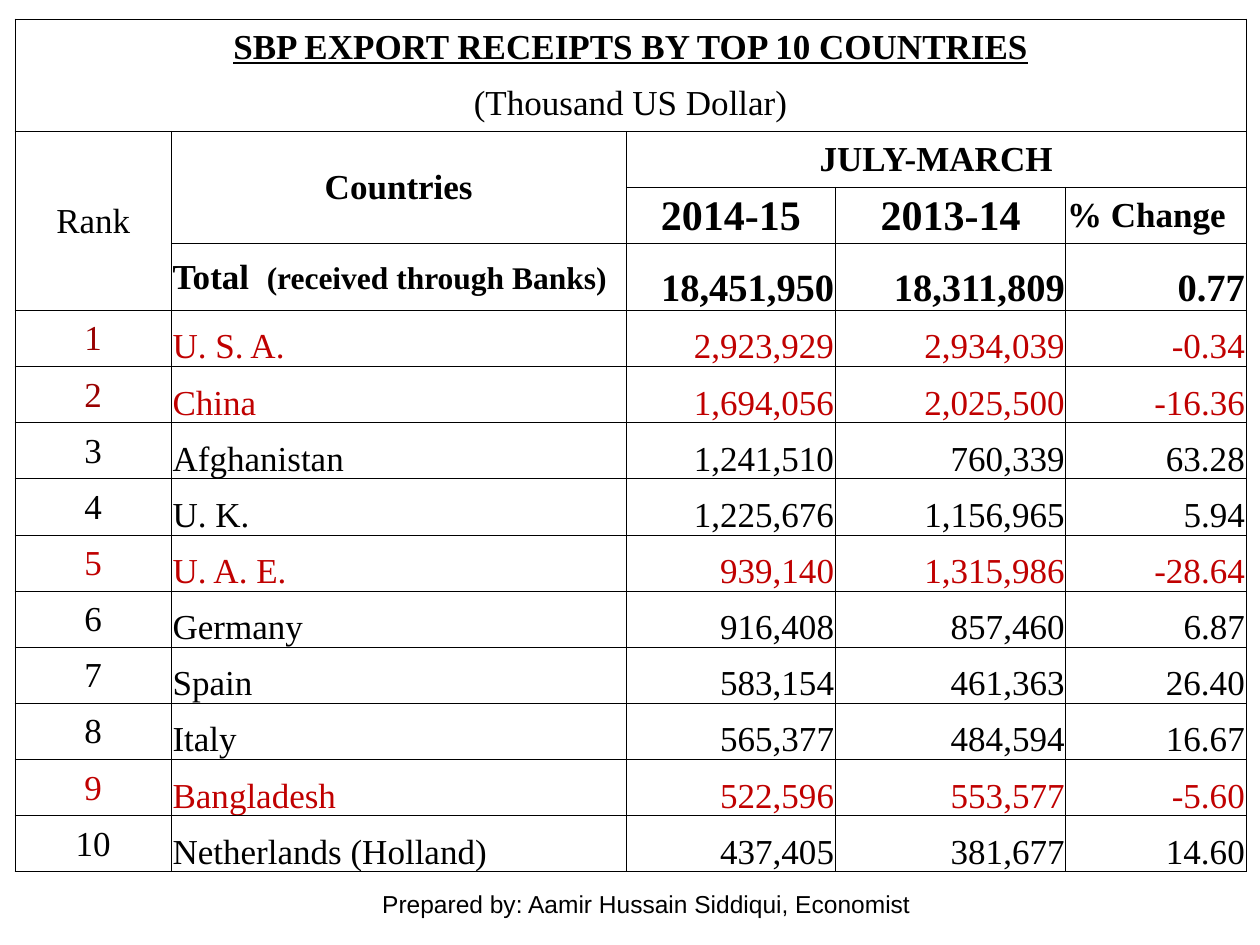
import pptx
import pptx.util
import pptx.dml.color
import pptx.enum.text
import pptx.oxml
import pptx.oxml.ns

Inches, Pt = pptx.util.Inches, pptx.util.Pt
ALIGN = pptx.enum.text.PP_ALIGN
ANCHOR = pptx.enum.text.MSO_ANCHOR

COLORS = {"ink": "000000", "fall": "C00000", "top_fall": "990000"}
SERIF, SANS = "Times New Roman", "Arial"

COLUMN_WIDTHS = [1.24, 3.61, 1.66, 1.83, 1.43]
TABLE_LEFT, TABLE_TOP, TABLE_HEIGHT = 0.12, 0.15, 6.77
TOTAL_ROW, TOTAL_HEIGHT = 4, 0.53
BORDER_WIDTH = 0.5

BOLD = {"bold": True}
HEADINGS = [
    (0, 0, 1, 5, ALIGN.CENTER, [("SBP EXPORT RECEIPTS BY TOP 10 COUNTRIES", {"bold": True, "underline": True})]),
    (1, 0, 1, 5, ALIGN.CENTER, [("(Thousand US Dollar)", {})]),
    (2, 0, 3, 1, ALIGN.CENTER, [("Rank", {})]),
    (2, 1, 2, 1, ALIGN.CENTER, [("Countries", BOLD)]),
    (2, 2, 1, 3, ALIGN.CENTER, [("JULY-MARCH", BOLD)]),
    (3, 2, 1, 1, ALIGN.CENTER, [("2014-15", {"bold": True, "size": 24})]),
    (3, 3, 1, 1, ALIGN.CENTER, [("2013-14", {"bold": True, "size": 24})]),
    (3, 4, 1, 1, ALIGN.LEFT, [("% Change", BOLD)]),
    (4, 1, 1, 1, ALIGN.LEFT, [("Total  ", BOLD), ("(received through Banks)", {"bold": True, "size": 18})]),
]
TOTALS = ["18,451,950", "18,311,809", "0.77"]
COUNTRIES = [
    ("U. S. A.", "2,923,929", "2,934,039", "-0.34"),
    ("China", "1,694,056", "2,025,500", "-16.36"),
    ("Afghanistan", "1,241,510", "760,339", "63.28"),
    ("U. K.", "1,225,676", "1,156,965", "5.94"),
    ("U. A. E.", "939,140", "1,315,986", "-28.64"),
    ("Germany", "916,408", "857,460", "6.87"),
    ("Spain", "583,154", "461,363", "26.40"),
    ("Italy", "565,377", "484,594", "16.67"),
    ("Bangladesh", "522,596", "553,577", "-5.60"),
    ("Netherlands (Holland)", "437,405", "381,677", "14.60"),
]
CREDIT = "Prepared by: Aamir Hussain Siddiqui, Economist"


def add_run(paragraph, text, size=20, font=SERIF, color="ink", bold=False, underline=False):
    run = paragraph.add_run()
    run.text = text
    run.font.size = Pt(size)
    run.font.name = font
    run.font.bold = bold
    run.font.underline = underline
    run.font.color.rgb = pptx.dml.color.RGBColor.from_string(COLORS[color])


def write_cell(cell, align, runs, anchor=ANCHOR.MIDDLE):
    cell.vertical_anchor = anchor
    paragraph = cell.text_frame.paragraphs[0]
    paragraph.alignment = align
    for text, style in runs:
        add_run(paragraph, text, **style)


def format_cell(cell, open_side):
    cell.margin_left = cell.margin_right = cell.margin_top = Inches(0.01)
    cell.margin_bottom = 0
    cell.fill.background()
    properties = cell._tc.get_or_add_tcPr()
    for position, side in enumerate("LRTB"):
        paint = "<a:noFill/>" if side == open_side else (
            f'<a:solidFill><a:srgbClr val="{COLORS["ink"]}"/></a:solidFill>')
        properties.insert(position, pptx.oxml.parse_xml(
            f'<a:ln{side} {pptx.oxml.ns.nsdecls("a")} w="{Pt(BORDER_WIDTH)}">{paint}</a:ln{side}>'))


def add_receipts(slide):
    row_count = TOTAL_ROW + 1 + len(COUNTRIES)
    receipts = slide.shapes.add_table(
        row_count, len(COLUMN_WIDTHS), Inches(TABLE_LEFT), Inches(TABLE_TOP),
        Inches(sum(COLUMN_WIDTHS)), Inches(TABLE_HEIGHT)).table
    receipts.first_row = receipts.horz_banding = False
    for column, width in zip(receipts.columns, COLUMN_WIDTHS):
        column.width = Inches(width)
    row_height = (TABLE_HEIGHT - TOTAL_HEIGHT) / (row_count - 1)
    for index, row in enumerate(receipts.rows):
        row.height = Inches(TOTAL_HEIGHT if index == TOTAL_ROW else row_height)
        for cell in row.cells:
            format_cell(cell, {0: "B", 1: "T"}.get(index))

    for row, column, height, width, align, runs in HEADINGS:
        cell = receipts.cell(row, column)
        if height * width > 1:
            cell.merge(receipts.cell(row + height - 1, column + width - 1))
        write_cell(cell, align, runs)
    for column, total in enumerate(TOTALS, 2):
        write_cell(receipts.cell(TOTAL_ROW, column), ALIGN.RIGHT,
                   [(total, {"bold": True, "size": 22})], ANCHOR.BOTTOM)

    for rank, entries in enumerate(COUNTRIES, 1):
        color = "fall" if entries[-1].startswith("-") else "ink"
        rank_color = "top_fall" if color == "fall" and rank <= 2 else color
        row = TOTAL_ROW + rank
        write_cell(receipts.cell(row, 0), ALIGN.CENTER, [(str(rank), {"color": rank_color})])
        for column, entry in enumerate(entries, 1):
            align = ALIGN.LEFT if column == 1 else ALIGN.RIGHT
            write_cell(receipts.cell(row, column), align, [(entry, {"color": color})], ANCHOR.BOTTOM)


def add_credit(slide):
    credit = slide.shapes.add_textbox(Inches(2.92), Inches(7.01), Inches(4.42), Inches(0.34)).text_frame
    credit.word_wrap = True
    paragraph = credit.paragraphs[0]
    paragraph.alignment = ALIGN.CENTER
    add_run(paragraph, CREDIT, size=14, font=SANS)


def main():
    deck = pptx.Presentation()
    deck.slide_width, deck.slide_height = Inches(10), Inches(7.5)
    slide = deck.slides.add_slide(deck.slide_layouts[6])
    add_receipts(slide)
    add_credit(slide)
    deck.save("out.pptx")


if __name__ == "__main__":
    main()
